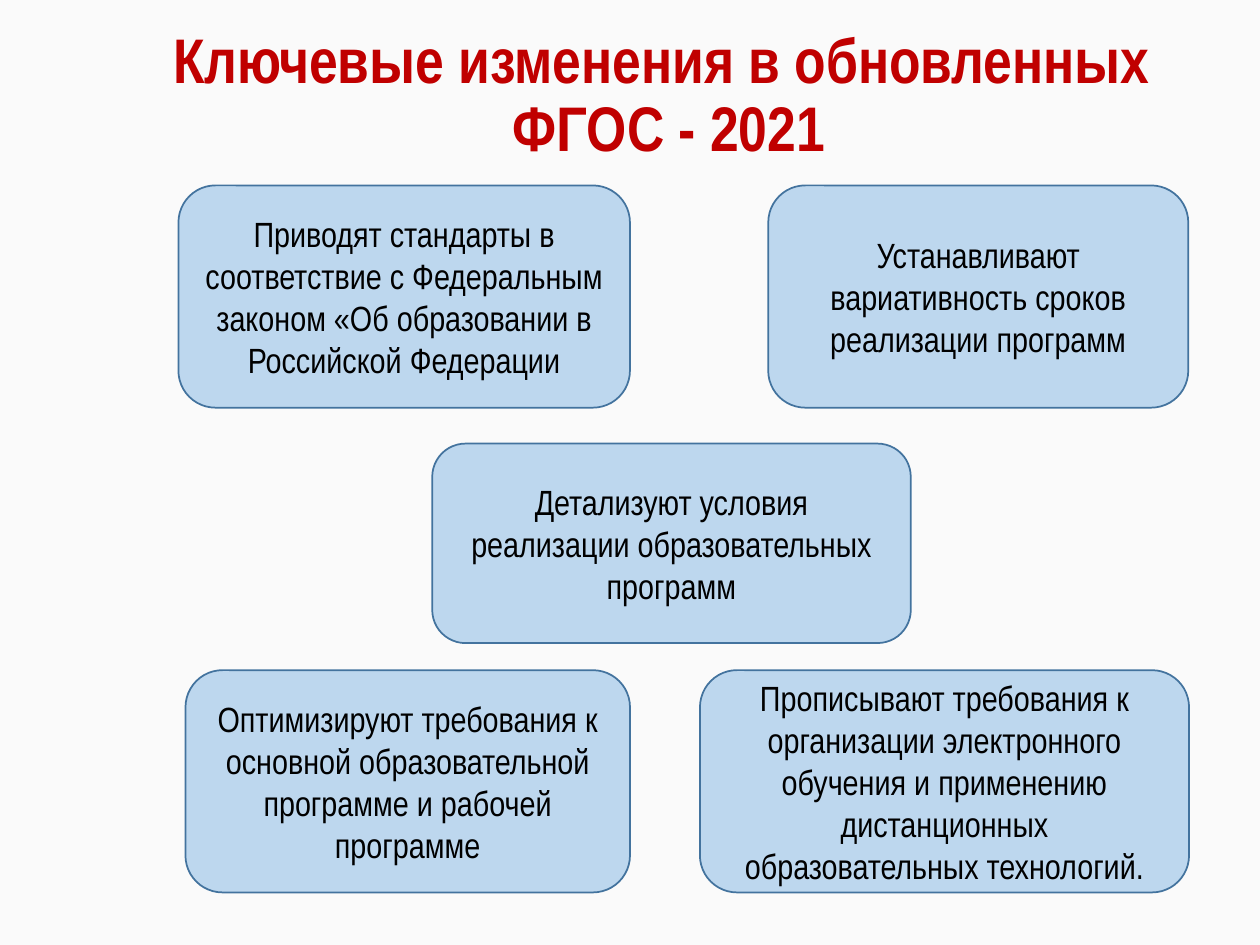
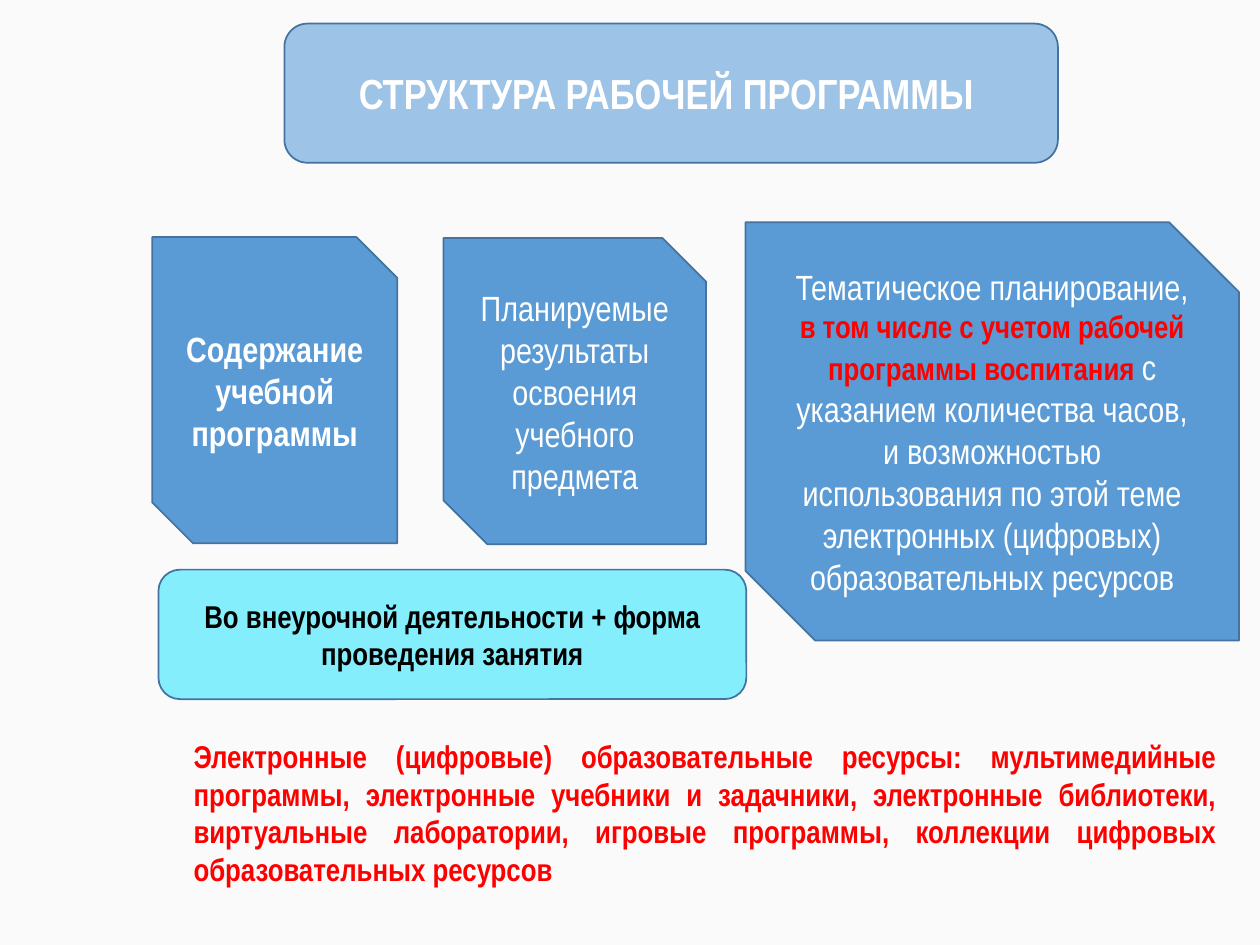
from pptx import Presentation
from pptx.dml.color import RGBColor
from pptx.enum.shapes import MSO_SHAPE
from pptx.enum.text import MSO_ANCHOR, MSO_AUTO_SIZE, PP_ALIGN
from pptx.util import Pt

ROUNDED = MSO_SHAPE.ROUNDED_RECTANGLE
HEADER_SHAPE = MSO_SHAPE.FLOWCHART_ALTERNATE_PROCESS
SNIPPED = MSO_SHAPE.SNIP_2_DIAG_RECTANGLE
MIDDLE = MSO_ANCHOR.MIDDLE
NO_AUTOFIT, GROW = MSO_AUTO_SIZE.NONE, MSO_AUTO_SIZE.SHAPE_TO_FIT_TEXT
CENTER, JUSTIFY = PP_ALIGN.CENTER, PP_ALIGN.JUSTIFY

FONT = "Arial Narrow"
BACKGROUND = RGBColor(0xFA, 0xFA, 0xFA)
DARK_RED = RGBColor(0xC0, 0x00, 0x00)
RED = RGBColor(0xFF, 0x00, 0x00)
BLACK = RGBColor(0x00, 0x00, 0x00)
WHITE = RGBColor(0xFF, 0xFF, 0xFF)
OUTLINE = RGBColor(0x43, 0x73, 0x9E)
PALE_BLUE = RGBColor(0xBD, 0xD7, 0xEE)
LIGHT_BLUE = RGBColor(0x9D, 0xC3, 0xE6)
BLUE = RGBColor(0x5B, 0x9B, 0xD5)
CYAN = RGBColor(0x84, 0xEE, 0xFC)


def add_run(paragraph, text, size, color, bold=False):
    run = paragraph.add_run()
    run.text = text
    run.font.name = FONT
    run.font.size = Pt(size)
    run.font.bold = bold
    run.font.color.rgb = color


def add_box(slide, geometry, place, fill, runs):
    """Add an outlined shape with centred text; runs hold text, size, colour, bold."""
    box = slide.shapes.add_shape(geometry, *map(Pt, place))
    box.shadow.inherit = False
    box.fill.solid()
    box.fill.fore_color.rgb = fill
    box.line.color.rgb = OUTLINE
    box.line.width = Pt(1)
    frame = box.text_frame
    frame.word_wrap = True
    frame.vertical_anchor = MIDDLE
    paragraph = frame.paragraphs[0]
    paragraph.alignment = CENTER
    for run in runs:
        add_run(paragraph, *run)


prs = Presentation()
prs.slide_width, prs.slide_height = Pt(720), Pt(540)
prs.slide_master.background.fill.solid()
prs.slide_master.background.fill.fore_color.rgb = BACKGROUND
title_only, blank = prs.slide_layouts[5], prs.slide_layouts[6]

# Slide 1: key changes
changes_slide = prs.slides.add_slide(title_only)
title = changes_slide.shapes.title
title.left, title.top, title.width, title.height = Pt(72), Pt(3), Pt(620.5), Pt(104.5)
title.text_frame.auto_size = NO_AUTOFIT
title.text_frame.word_wrap = True
title.text_frame.vertical_anchor = MIDDLE
heading = title.text_frame.paragraphs[0]
heading.alignment = CENTER
heading.line_spacing = 0.9
add_run(heading, "Ключевые изменения в обновленных ", 36, DARK_RED, True)
heading.add_line_break()
add_run(heading, "ФГОС - 2021", 36, DARK_RED, True)

TOP_ROW, MIDDLE_ROW, BOTTOM_ROW = 106, 253.5, 383
ROW_HEIGHT = 127
changes = [
    ((102, TOP_ROW, 258, ROW_HEIGHT),
     "Приводят стандарты в соответствие c Федеральным законом "
     "«Об образовании в Российской Федерации"),
    ((439, TOP_ROW, 240, ROW_HEIGHT),
     "Устанавливают вариативность сроков реализации программ"),
    ((247, MIDDLE_ROW, 273.5, 114),
     "Детализуют условия реализации образовательных программ"),
    ((106, BOTTOM_ROW, 254, ROW_HEIGHT),
     "Оптимизируют требования к основной образовательной программе "
     "и рабочей программе"),
    ((400, BOTTOM_ROW, 279.5, ROW_HEIGHT),
     "Прописывают требования к организации электронного обучения и применению "
     "дистанционных образовательных технологий."),
]
for place, change in changes:
    add_box(changes_slide, ROUNDED, place, PALE_BLUE, [(change, 20, BLACK)])

# Slide 2: structure of the work programme
structure_slide = prs.slides.add_slide(blank)
add_box(structure_slide, HEADER_SHAPE, (162.5, 13.5, 442, 79.5), LIGHT_BLUE,
        [("СТРУКТУРА РАБОЧЕЙ ПРОГРАММЫ ", 24, WHITE, True)])

sections = [
    ((87, 135.5, 140, 175),
     [("Содержание учебной программы", 20, WHITE, True)]),
    ((253.5, 136, 150, 175),
     [("Планируемые результаты освоения учебного предмета", 20, WHITE)]),
    ((426, 127, 282, 239),
     [("Тематическое планирование, ", 20, WHITE),
      ("в том числе с учетом рабочей программы воспитания ", 18, RED, True),
      ("с указанием количества часов, и возможностью использования по этой теме "
       "электронных (цифровых) образовательных ресурсов", 20, WHITE)]),
]
for place, runs in sections:
    add_box(structure_slide, SNIPPED, place, BLUE, runs)

add_box(structure_slide, ROUNDED, (90.5, 325.5, 336, 74), CYAN,
        [("Во внеурочной деятельности + форма проведения занятия", 18, BLACK, True)])

resources = structure_slide.shapes.add_textbox(Pt(103.5), Pt(417.5), Pt(599), Pt(94.5))
resources.text_frame.word_wrap = True
resources.text_frame.auto_size = GROW
resource_list = resources.text_frame.paragraphs[0]
resource_list.alignment = JUSTIFY
add_run(resource_list,
        "Электронные (цифровые) образовательные ресурсы: мультимедийные программы, "
        "электронные учебники и задачники, электронные библиотеки, виртуальные "
        "лаборатории, игровые программы, коллекции цифровых образовательных ресурсов",
        18, RED, True)

prs.save("out.pptx")
